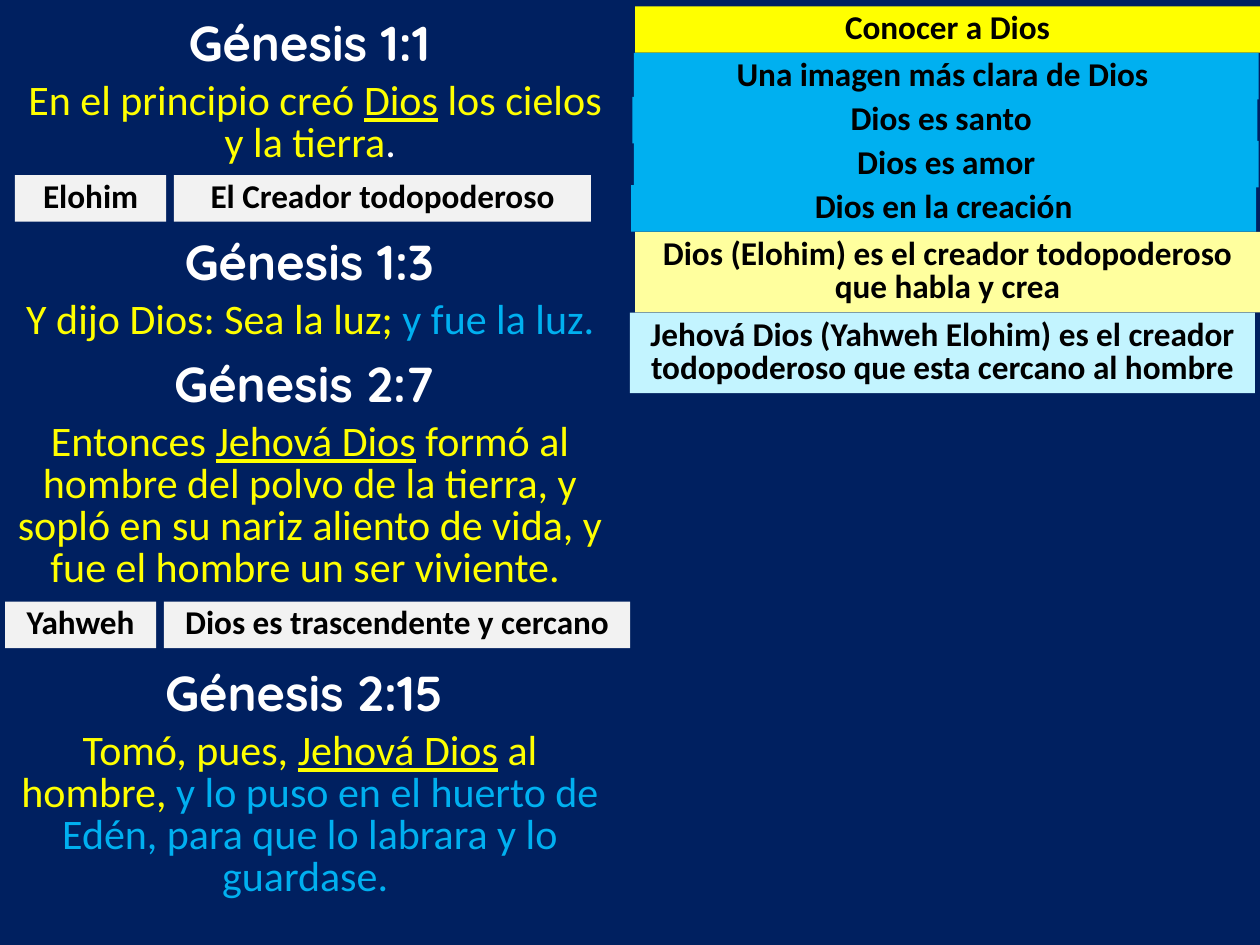
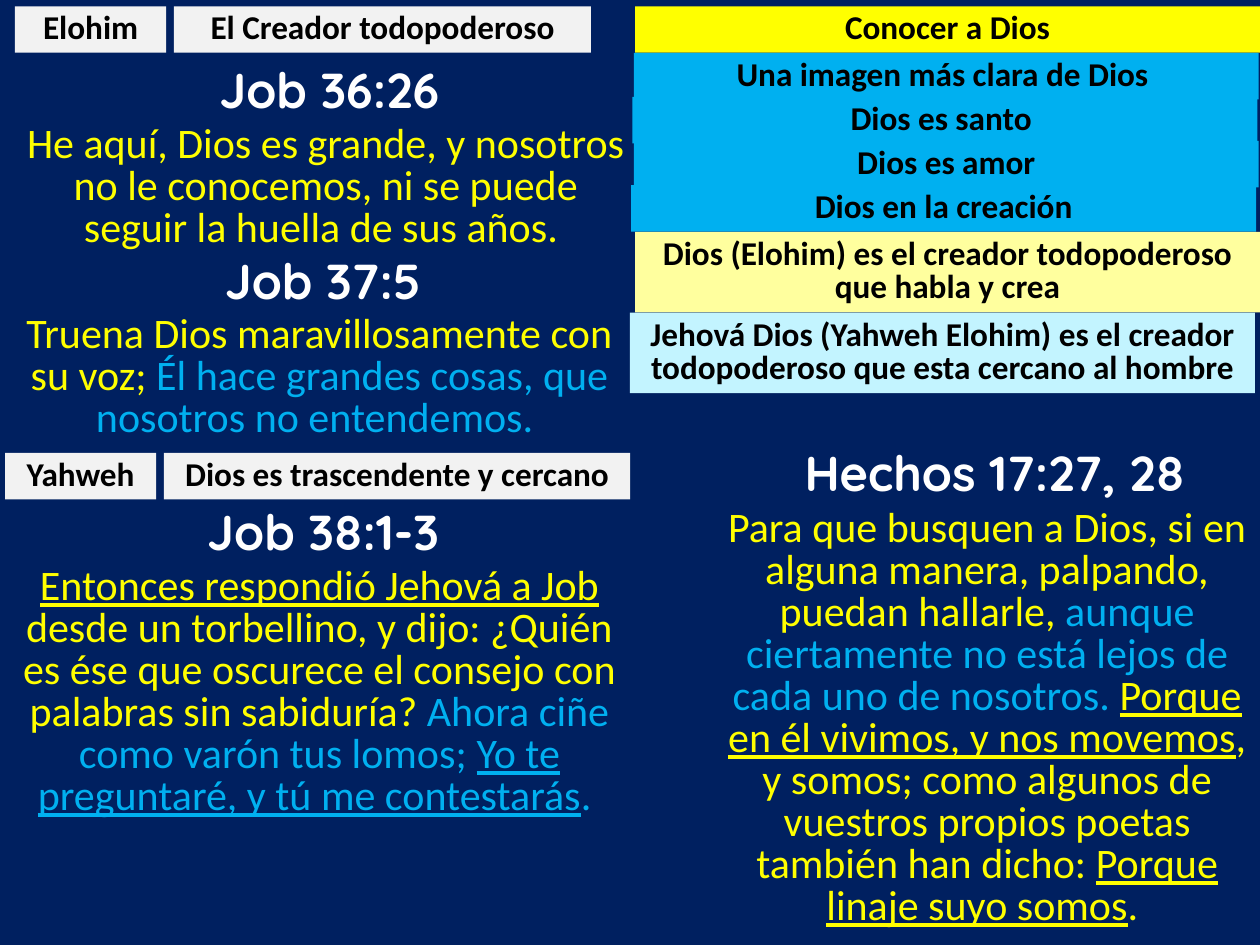
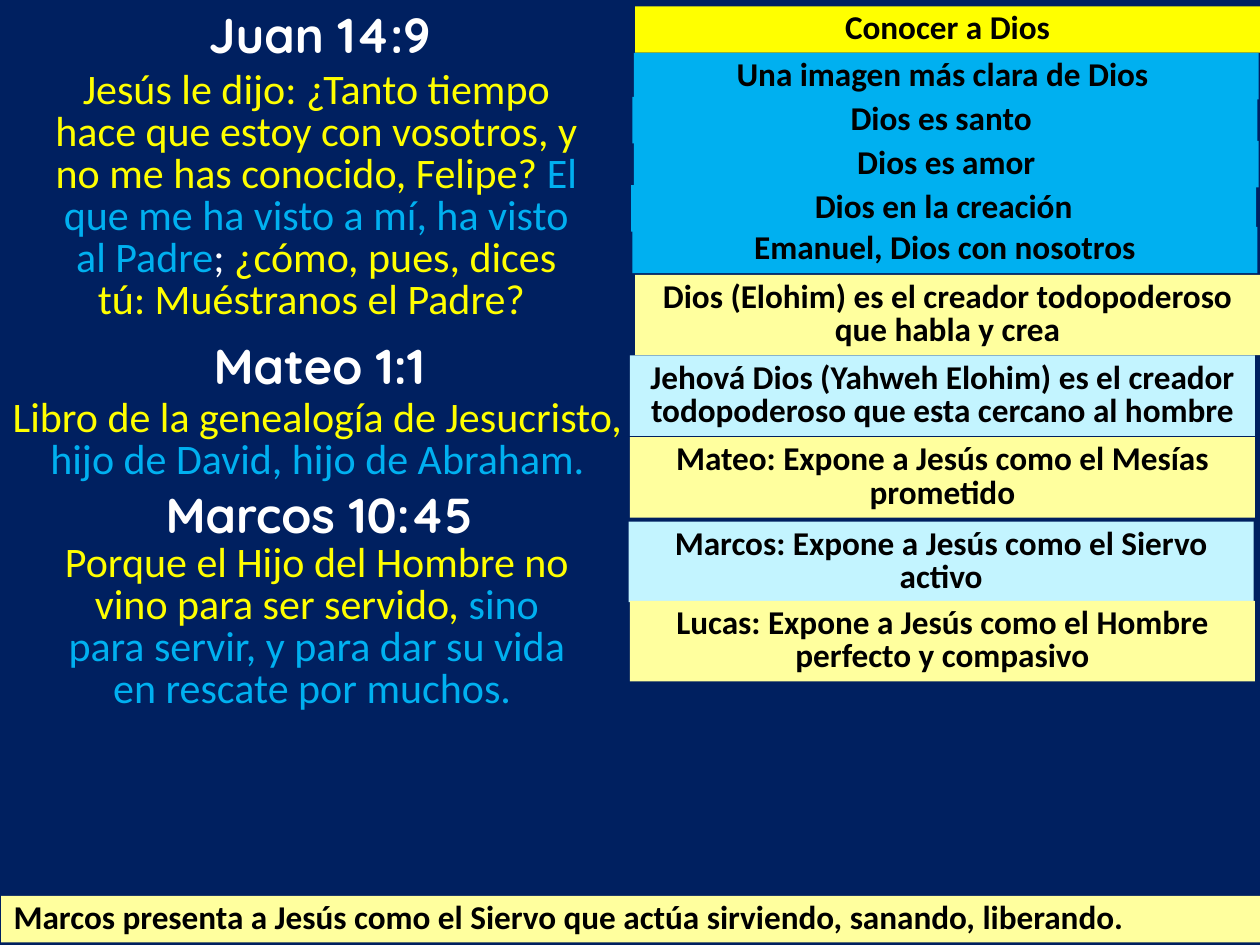
import pptx
import pptx.util
import pptx.dml.color
import pptx.enum.shapes
import pptx.enum.text

Pt = pptx.util.Pt
RGB = pptx.dml.color.RGBColor
ALIGN = pptx.enum.text.PP_ALIGN
RECT = pptx.enum.shapes.MSO_SHAPE.RECTANGLE

NAVY = RGB(0x00, 0x20, 0x60)
YELLOW = RGB(0xFF, 0xFF, 0x00)
BLUE = RGB(0x00, 0xB0, 0xF0)
CREAM = RGB(0xFF, 0xFF, 0x9E)
ICE = RGB(0xC3, 0xF4, 0xFF)
GREY = RGB(0xF2, 0xF2, 0xF2)
WHITE = RGB(0xFF, 0xFF, 0xFF)
BLACK = RGB(0x00, 0x00, 0x00)

BODY, HEAD = "Calibri", "Quicksand"
PANEL = (360, 3.6, 357.1)  # left, top, width
TOPICS = [
    ("Una imagen más clara de Dios ", 2.2),
    ("Dios es santo ", 1.4),
    ("Dios es amor", 2.2),
    ("Dios en la creación", 0.7),
]


def add_run(para, text, font, size, color, bold=False, under=False):
    run = para.add_run()
    run.text = text
    run.font.name = font
    run.font.size = Pt(size)
    run.font.color.rgb = color
    run.font.bold = bold
    run.font.underline = under


def start(shape, align=ALIGN.CENTER, pitch=None):
    """Set up the text frame and return its first paragraph."""
    shape.text_frame.word_wrap = True
    para = shape.text_frame.paragraphs[0]
    para.alignment = align
    if pitch:
        para.line_spacing = Pt(pitch)
    return para


def band(slide, box, text, fill, lines=1, align=ALIGN.CENTER):
    left, top, width = box
    shape = slide.shapes.add_shape(
        RECT, Pt(left), Pt(top), Pt(width), Pt(7.2 + 19.4 * lines))
    shape.shadow.inherit = False
    shape.fill.solid()
    shape.fill.fore_color.rgb = fill
    shape.line.fill.background()
    add_run(start(shape, align, 19), text, BODY, 19, BLACK, bold=True)


def panel(slide, box, claims, extra=None):
    """Stack the study title, its topics and the two-line claims."""
    left, top, width = box
    band(slide, (left + 2.9, top, width), "Conocer a Dios", YELLOW)
    for i, (text, shift) in enumerate(TOPICS):
        band(slide, (left + shift, top + 26.6 + 25.2 * i, width), text, BLUE)
    if extra:
        band(slide, (left + 1.4, top + 126, width), extra, BLUE)
    for text, fill, shift, drop in claims:
        band(slide, (left + shift, top + drop, width), text, fill, lines=2)


def tags(slide, box, name, sense):
    """Place a divine name beside its meaning, in a box of the full width."""
    left, top, width = box
    band(slide, (left, top, 86.4), name, GREY)
    band(slide, (left + 90.8, top, width - 90.8), sense, GREY)


def verse(slide, box, lines, title, runs, inset=36, rise=37.4, tall=41):
    """Place a passage in the box, and its reference above it."""
    left, top, width = box
    head = slide.shapes.add_textbox(
        Pt(left + inset), Pt(top - rise), Pt(283.7), Pt(tall))
    add_run(start(head), " " + title, HEAD, 28, WHITE, bold=True)
    text = slide.shapes.add_textbox(
        Pt(left), Pt(top), Pt(width), Pt(7.2 + 24.3 * lines))
    para = start(text, pitch=24)
    for words, color, *under in runs:
        add_run(para, words, BODY, 24, color, under=bool(under))


def new(deck):
    slide = deck.slides.add_slide(deck.slide_layouts[6])
    slide.background.fill.solid()
    slide.background.fill.fore_color.rgb = NAVY
    return slide


def claims(top):
    return [
        ("Dios (Elohim) es el creador todopoderoso que habla y crea",
         CREAM, 2.9, top),
        ("Jehová Dios (Yahweh Elohim) es el creador todopoderoso "
         "que esta cercano al hombre", ICE, 0, top + 46.1),
    ]


def names(slide, first, second):
    tags(slide, (8.6, first, 329.1), "Elohim", "El Creador todopoderoso")
    tags(slide, (2.9, second, 357.2), "Yahweh",
         "Dios es trascendente y cercano")


def genesis(deck):
    slide = new(deck)
    panel(slide, PANEL, claims(128.9))
    names(slide, 100.1, 343.8)
    passages = [
        (5.8, 43.2, 2, "Génesis 1:1", [
            ("En el principio creó ", YELLOW), ("Dios", YELLOW, True),
            (" los cielos y la tierra", YELLOW), (". ", WHITE)]),
        (5.8, 168.5, 1, "Génesis 1:3", [
            ("Y dijo Dios: Sea la luz; ", YELLOW), ("y fue la luz. ", BLUE)]),
        (2.9, 238.3, 4, "Génesis 2:7", [
            ("Entonces ", YELLOW), ("Jehová Dios", YELLOW, True),
            (" formó al hombre del polvo de la tierra, y sopló en su nariz "
             "aliento de vida, y fue el hombre un ser viviente. ", YELLOW)]),
        (2.9, 414.7, 4, "Génesis 2:15", [
            ("Tomó, pues, ", YELLOW), ("Jehová Dios", YELLOW, True),
            (" al hombre, ", YELLOW),
            ("y lo puso en el huerto de Edén, para que lo labrara y lo "
             "guardase. ", BLUE)]),
    ]
    for left, top, lines, title, runs in passages:
        verse(slide, (left, top, 348.5), lines, title, runs, 25.2, 39.6)


def job(deck):
    slide = new(deck)
    panel(slide, PANEL, claims(128.9))
    names(slide, 3.6, 258.8)
    verse(slide, (6.5, 67.7, 359.3), 3, "Job 36:26", [
        ("He aquí, Dios es grande, y nosotros no le conocemos, ni se puede "
         "seguir la huella de sus años. ", YELLOW)])
    verse(slide, (2.9, 176.4, 359.3), 3, "Job 37:5", [
        ("Truena Dios maravillosamente con su voz; ", YELLOW),
        ("Él hace grandes cosas, que nosotros no entendemos. ", BLUE)],
        rise=36.7)
    verse(slide, (2.9, 320.4, 359.3), 6, "Job 38:1-3", [
        ("Entonces respondió Jehová a Job", YELLOW, True),
        (" desde un torbellino, y dijo: ¿Quién es ése que oscurece el consejo "
         "con palabras sin sabiduría? ", YELLOW),
        ("Ahora ciñe como varón tus lomos; ", BLUE),
        ("Yo te preguntaré, y tú me contestarás", BLUE, True), (". ", BLUE)])
    verse(slide, (408.2, 287.3, 311.8), 10, "Hechos 17:27, 28", [
        ("Para que busquen a Dios, si en alguna manera, palpando, puedan "
         "hallarle, ", YELLOW),
        ("aunque ciertamente no está lejos de cada uno de nosotros. ", BLUE),
        ("Porque en él vivimos, y nos movemos", YELLOW, True),
        (", y somos; como algunos de vuestros propios poetas también han "
         "dicho: ", YELLOW),
        ("Porque linaje suyo somos", YELLOW, True), (". ", YELLOW)],
        inset=14.4, rise=38.2)


def gospels(deck):
    slide = new(deck)
    panel(slide, PANEL, claims(153.4) + [
        ("Mateo: Expone a Jesús como el Mesías prometido", CREAM, 0, 246.2),
        ("Marcos: Expone a Jesús como el Siervo activo", ICE, -0.7, 294.5),
        ("Lucas: Expone a Jesús como el Hombre perfecto y compasivo",
         CREAM, 0, 339.8),
    ], "Emanuel, Dios con nosotros")
    verse(slide, (23.8, 36.7, 313.9), 6, "Juan 14:9", [
        ("Jesús le dijo: ¿Tanto tiempo hace que estoy con vosotros, y no me "
         "has conocido, Felipe? ", YELLOW),
        ("El que me ha visto a mí, ha visto al Padre", BLUE), ("; ", WHITE),
        ("¿cómo, pues, dices tú: Muéstranos el Padre? ", YELLOW)], inset=13)
    verse(slide, (-2.9, 224.6, 368.6), 2, "Mateo 1:1", [
        ("Libro de la genealogía de Jesucristo, ", YELLOW),
        ("hijo de David, hijo de Abraham.", BLUE)],
        inset=39.6, rise=36.7, tall=74.9)
    verse(slide, (25.2, 307.4, 311.8), 4, "Marcos 10:45", [
        ("Porque el Hijo del Hombre no vino para ser servido, ", YELLOW),
        ("sino para servir, y para dar su vida en rescate por muchos. ",
         BLUE)], inset=11.5, rise=33.8, tall=74.9)
    band(slide, (0.7, 511.9, 719.3),
         "Marcos presenta a Jesús como el Siervo que actúa sirviendo, "
         "sanando, liberando.", CREAM, align=ALIGN.LEFT)


def main():
    deck = pptx.Presentation()
    deck.slide_width, deck.slide_height = Pt(720), Pt(540)
    for build in (genesis, job, gospels):
        build(deck)
    deck.save("out.pptx")


if __name__ == "__main__":
    main()
